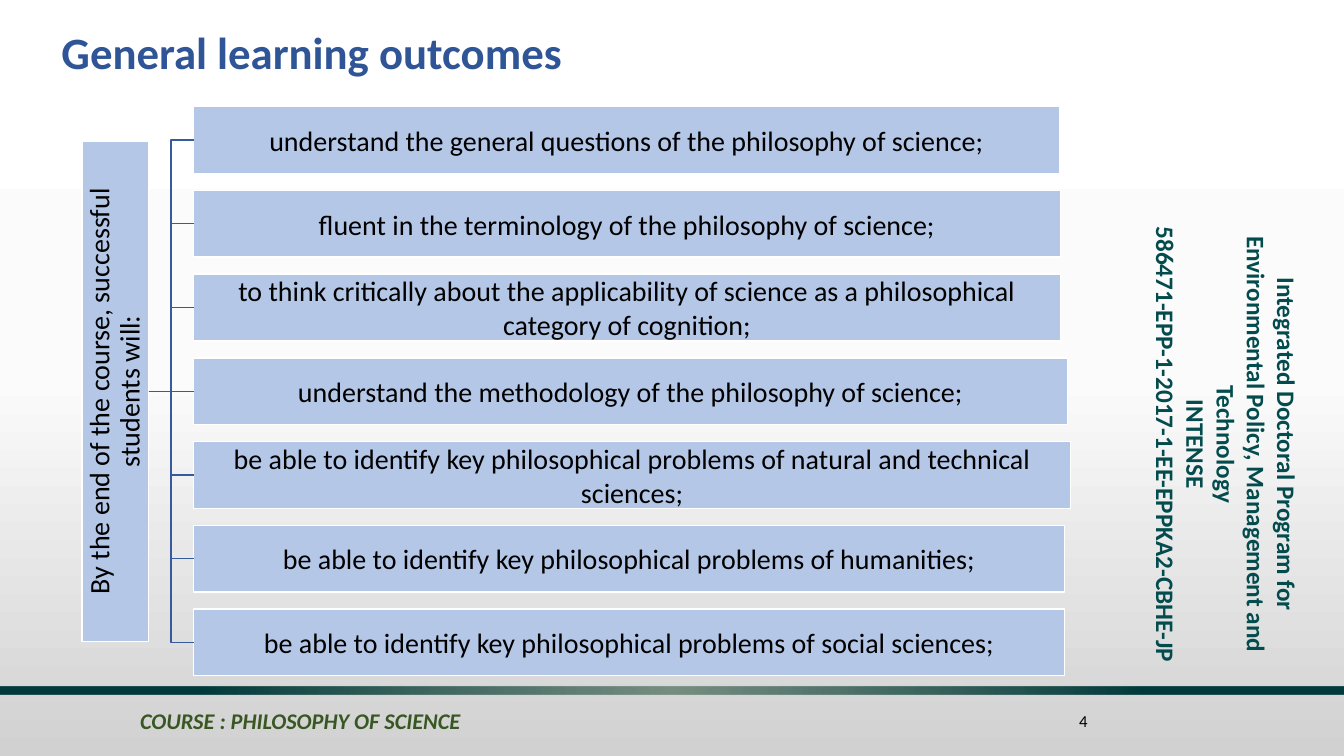
from lxml import etree
from pptx import Presentation
from pptx.dml.color import RGBColor
from pptx.enum.shapes import MSO_CONNECTOR, MSO_SHAPE
from pptx.enum.text import MSO_ANCHOR, PP_ALIGN
from pptx.oxml.ns import qn
from pptx.util import Cm, Pt

RECTANGLE = MSO_SHAPE.RECTANGLE
STRAIGHT, ELBOW = MSO_CONNECTOR.STRAIGHT, MSO_CONNECTOR.ELBOW
TOP, MIDDLE, BOTTOM = MSO_ANCHOR.TOP, MSO_ANCHOR.MIDDLE, MSO_ANCHOR.BOTTOM
LEFT, CENTER, RIGHT = PP_ALIGN.LEFT, PP_ALIGN.CENTER, PP_ALIGN.RIGHT

BOX_LEFT, BOX_TOP, BOX_HEIGHT, BOX_PITCH = 4.88, 2.69, 1.68, 2.11
ROOT_LEFT, ROOT_WIDTH = -3.4, 12.62
BOX_FORMAT = {"size": Pt(20), "bold": False}
OUTCOMES = [
    ("understand the general questions of the philosophy of science;", 21.82),
    ("fluent in the terminology of the philosophy of science;", 21.84),
    ("to think critically about the applicability of science as a philosophical category of cognition;", 21.84),
    ("understand the methodology of the philosophy of science;", 22.02),
    ("be able to identify key philosophical problems of natural and technical sciences;", 22.1),
    ("be able to identify key philosophical problems of humanities;", 21.95),
    ("be able to identify key philosophical problems of social sciences;", 21.95),
]
PROGRAM_LINES = [
    "Integrated Doctoral Program for Environmental Policy, Management and Technology",
    "INTENSE",
    "586471-EPP-1-2017-1-EE-EPPKA2-CBHE-JP",
]


def color(value):
    return RGBColor.from_string(value)


def set_gradient(fill, element, stops, angle=None):
    fill.gradient()
    gradient = element.find(".//" + qn("a:gradFill"))
    for child in list(gradient):
        gradient.remove(child)
    stop_list = etree.SubElement(gradient, qn("a:gsLst"))
    for position, value, opacity in stops:
        stop = etree.SubElement(stop_list, qn("a:gs"), pos=str(position * 1000))
        stop_color = etree.SubElement(stop, qn("a:srgbClr"), val=value)
        if opacity < 100:
            etree.SubElement(stop_color, qn("a:alpha"), val=str(opacity * 1000))
    if angle is None:
        circle = etree.SubElement(gradient, qn("a:path"), path="circle")
        etree.SubElement(circle, qn("a:fillToRect"), l="50000", t="50000", r="50000", b="50000")
    else:
        etree.SubElement(gradient, qn("a:lin"), ang=str(angle * 60000), scaled="0")


def write_text(shape, lines, text_color, font_format, align, anchor, spacing=None):
    frame = shape.text_frame
    frame.word_wrap = True
    frame.vertical_anchor = anchor
    paragraph = frame.paragraphs[0]
    paragraph.alignment = align
    if spacing:
        paragraph.line_spacing = spacing
    for index, line in enumerate(lines):
        if index:
            paragraph.add_line_break()
        run = paragraph.add_run()
        run.text = line
        run.font.name = "Calibri"
        run.font.color.rgb = color(text_color)
        for name, value in font_format.items():
            setattr(run.font, name, value)


def add_label(slide, place, lines, text_color, font_format, align=LEFT, anchor=MIDDLE, spacing=None, rotation=0):
    label = slide.shapes.add_textbox(*map(Cm, place))
    label.rotation = rotation
    write_text(label, lines, text_color, font_format, align, anchor, spacing)


def add_box(slide, place, text, spacing=None, rotation=0):
    box = slide.shapes.add_shape(RECTANGLE, *map(Cm, place))
    box.shadow.inherit = False
    box.rotation = rotation
    box.fill.solid()
    box.fill.fore_color.rgb = color("B4C7E7")
    box.line.color.rgb = color("FFFFFF")
    box.line.width = Pt(1)
    for side in ("left", "top", "right", "bottom"):
        setattr(box.text_frame, "margin_" + side, Cm(0.03))
    write_text(box, [text], "000000", BOX_FORMAT, CENTER, MIDDLE, spacing)
    return box


def add_branch(slide, root, box):
    begin_x = root.left + (root.width + root.height) // 2
    begin_y = root.top + root.height // 2
    end_y = box.top + box.height // 2
    is_level = begin_y == end_y
    branch = slide.shapes.add_connector(STRAIGHT if is_level else ELBOW, begin_x, begin_y, box.left, end_y)
    if is_level:
        branch.begin_connect(root, 2)
        branch.begin_x, branch.begin_y = begin_x, begin_y
        branch.end_connect(box, 1)
    branch.line.color.rgb = color("365B9D")
    branch.line.width = Pt(1)
    etree.SubElement(branch.element.spPr, qn("a:effectLst"))


def add_band(slide):
    band = slide.shapes.add_shape(RECTANGLE, Cm(0), Cm(17.3), Cm(33.87), Cm(0.2))
    band.shadow.inherit = False
    band.line.fill.background()
    set_gradient(band.fill, band.element, [(0, "668273", 85), (70, "023B3C", 100)])


def add_outcome_tree(slide):
    root_top = BOX_TOP + len(OUTCOMES) // 2 * BOX_PITCH
    root = add_box(
        slide, (ROOT_LEFT, root_top, ROOT_WIDTH, BOX_HEIGHT),
        "By the end of the course, successful students will:", 0.9, 270,
    )
    for index, (text, width) in enumerate(OUTCOMES):
        box = add_box(slide, (BOX_LEFT, BOX_TOP + index * BOX_PITCH, width, BOX_HEIGHT), text)
        add_branch(slide, root, box)


def main():
    presentation = Presentation()
    presentation.slide_width, presentation.slide_height = Cm(33.87), Cm(19.05)
    slide = presentation.slides.add_slide(presentation.slide_layouts[6])
    background_stops = [(0, "FFFFFF", 100), (50, "FBFBFB", 100), (100, "D1D1D1", 100)]
    set_gradient(slide.background.fill, slide.element, background_stops, 90)
    add_band(slide)
    add_label(
        slide, (24.77, 9.14, 12.24, 4.11), PROGRAM_LINES, "034B4D",
        {"size": Pt(18), "bold": True}, CENTER, TOP, rotation=90,
    )
    add_label(
        slide, (1.3, 0.43, 25.17, 1.68), ["General learning outcomes"], "2F5597",
        {"size": Pt(32), "bold": True}, anchor=BOTTOM, spacing=0.9,
    )
    add_label(slide, (25.93, 17.65, 1.73, 1.02), ["4"], "000000", {"size": Pt(12)}, RIGHT)
    add_label(
        slide, (3.28, 17.5, 28.12, 1.3), ["COURSE : PHILOSOPHY OF SCIENCE"], "385723",
        {"size": Pt(16), "bold": True, "italic": True},
    )
    add_outcome_tree(slide)
    presentation.save("out.pptx")


if __name__ == "__main__":
    main()
